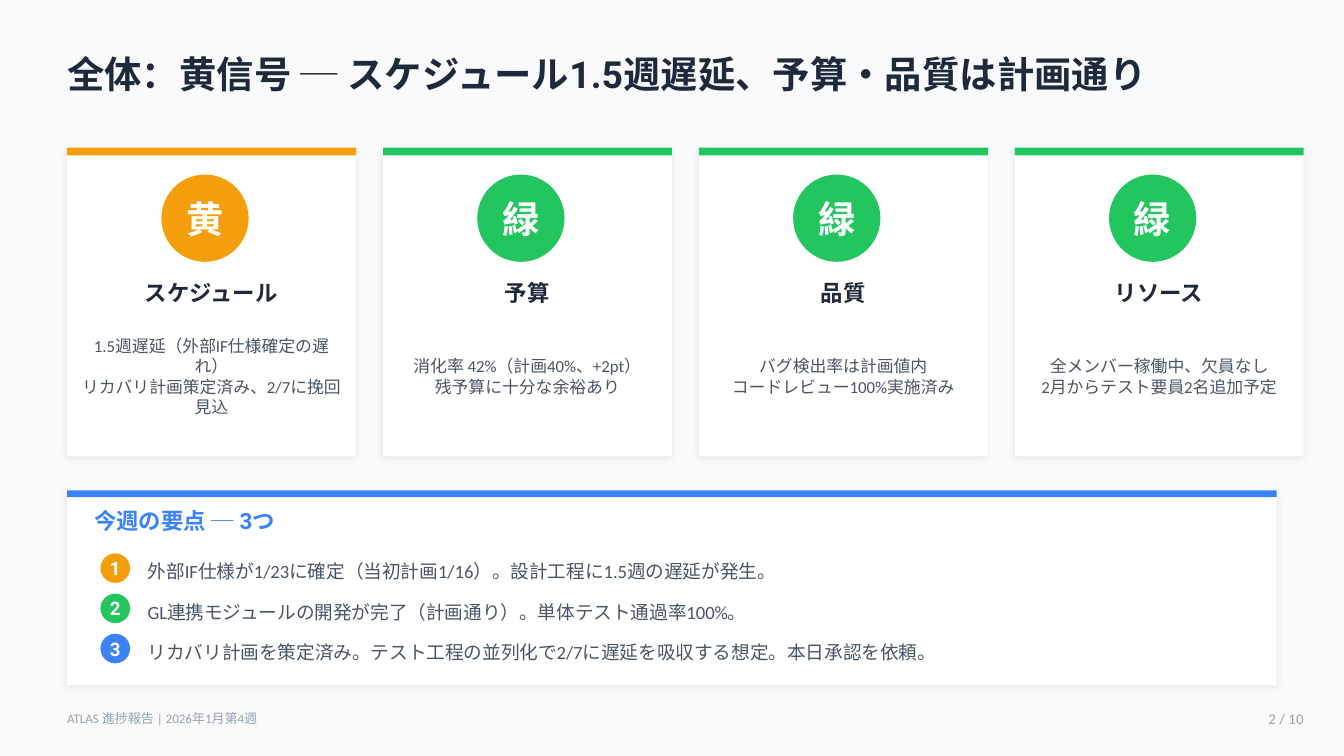
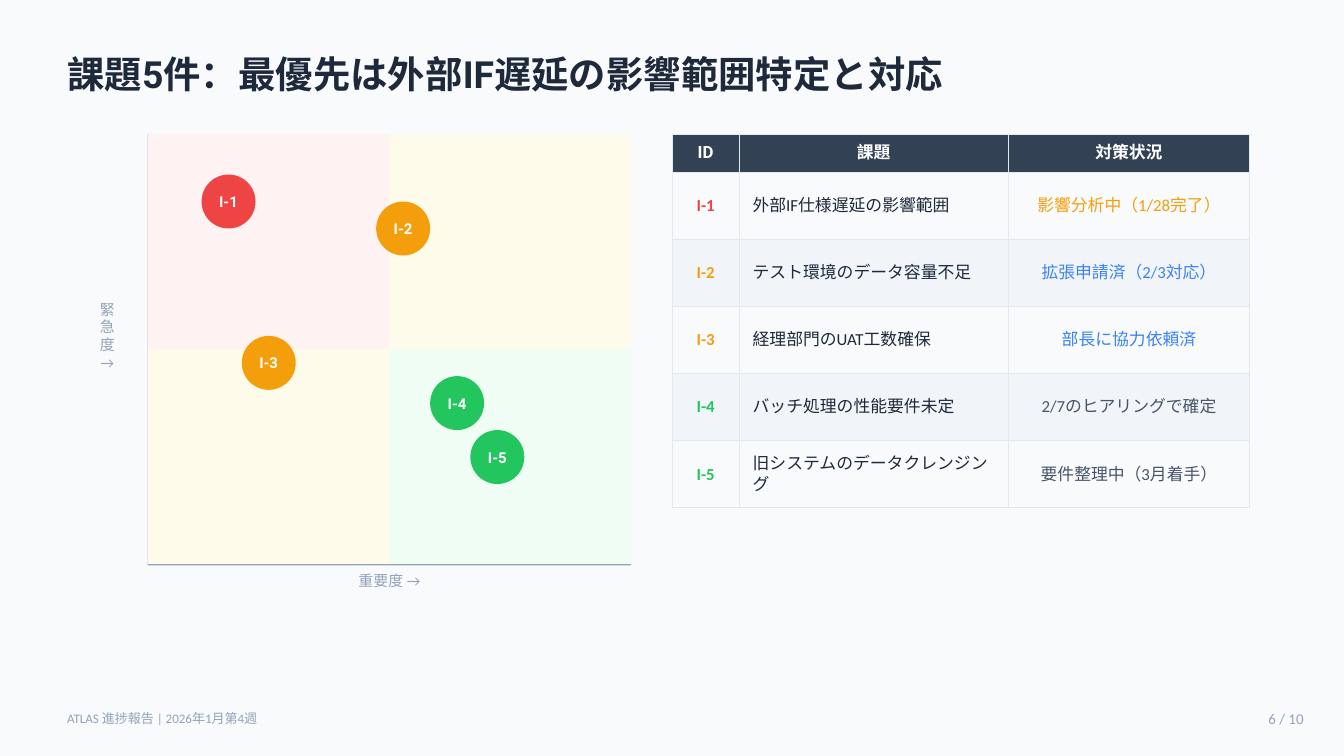
from lxml.etree import SubElement
from pptx import Presentation
from pptx.dml.color import RGBColor
from pptx.enum.shapes import MSO_SHAPE as Preset
from pptx.enum.text import MSO_ANCHOR as Anchor, MSO_AUTO_SIZE as AutoSize, PP_ALIGN as Align
from pptx.oxml.ns import qn
from pptx.util import Cm, Pt

RED, AMBER, GREEN, BLUE = "EF4444", "F59E0B", "22C55E", "3B82F6"
INK, BODY, MUTED, WHITE = "1E293B", "475569", "94A3B8", "FFFFFF"
BACKGROUND, HEADER, BAND, BORDER = "F8FAFC", "334155", "F1F5F9", "E2E8F0"
PALE_RED, PALE_AMBER, PALE_GREEN = "FEF2F2", "FFFBEB", "F0FDF4"
HEADING_FONT, BODY_FONT = "Roboto", "Calibri"
TITLE_AND_BODY, TITLE_ONLY = 1, 5
MARGIN = 1.27
PAGE_COUNT = 10


def rgb(value):
    return RGBColor.from_string(value)


def add_color(parent, value):
    """Append a solid colour element and return it."""
    return SubElement(parent, qn("a:srgbClr"), val=value)


class Deck:
    """Holds the shared style and the slide being built; lengths are centimetres."""

    def __init__(self):
        self.presentation = Presentation()
        self.presentation.slide_width = Cm(25.4)
        self.presentation.slide_height = Cm(14.29)
        fill = self.presentation.slide_master.background.fill
        fill.solid()
        fill.fore_color.rgb = rgb(BACKGROUND)
        self.slide = None

    def start_slide(self, layout, title, page):
        layouts = self.presentation.slide_layouts
        self.slide = self.presentation.slides.add_slide(layouts[layout])
        shape = self.slide.shapes.title
        self.place(shape, MARGIN, 0.76, 22.86, 1.27)
        self.set_text(shape.text_frame, title, 20, INK, HEADING_FONT, bold=True)
        self.add_text("ATLAS 進捗報告 | 2026年1月第4週", MARGIN, 13.26, 9.65, 0.64, 7, MUTED)
        self.add_text(f"{page} / {PAGE_COUNT}", 23.37, 13.26, 1.27, 0.64, 8, MUTED,
                      align=Align.RIGHT)

    def place(self, shape, left, top, width, height):
        """Position a text-bearing shape and give it the standard frame."""
        shape.left, shape.top = Cm(left), Cm(top)
        shape.width, shape.height = Cm(width), Cm(height)
        frame = shape.text_frame
        frame.margin_left = frame.margin_right = 0
        frame.margin_top = frame.margin_bottom = 0
        frame.vertical_anchor = Anchor.MIDDLE
        frame.auto_size = AutoSize.NONE
        frame.word_wrap = True

    def set_text(self, frame, text, size, color, font=BODY_FONT, bold=False, align=Align.LEFT):
        frame.text = text
        for paragraph in frame.paragraphs:
            paragraph.alignment = align
            for run in paragraph.runs:
                run.font.size = Pt(size)
                run.font.bold = bold
                run.font.color.rgb = rgb(color)
                run.font.name = font
                SubElement(run._r.get_or_add_rPr(), qn("a:ea"), typeface=font)

    def add_text(self, text, left, top, width, height, size, color, **style):
        shape = self.slide.shapes.add_textbox(0, 0, 0, 0)
        self.place(shape, left, top, width, height)
        self.set_text(shape.text_frame, text, size, color, **style)

    def add_list(self, items, left, top, width, height, pitch):
        """Fill the body placeholder, one unbulleted line per item, above earlier shapes."""
        shape = self.slide.placeholders[1]
        self.slide.shapes.element.append(shape.element)
        self.place(shape, left, top, width, height)
        self.set_text(shape.text_frame, "\n".join(items), 10, BODY)
        for paragraph in shape.text_frame.paragraphs:
            paragraph.space_before = Pt(0)
            paragraph.line_spacing = Cm(pitch)
            properties = paragraph._p.get_or_add_pPr()
            properties.set("marL", "0")
            properties.set("indent", "0")
            SubElement(properties, qn("a:buNone"))

    def add_block(self, left, top, width, height, color, preset=Preset.RECTANGLE):
        shape = self.slide.shapes.add_shape(preset, Cm(left), Cm(top), Cm(width), Cm(height))
        shape.shadow.inherit = False
        shape.fill.solid()
        shape.fill.fore_color.rgb = rgb(color)
        shape.line.fill.background()
        return shape

    def add_circle(self, text, left, top, diameter, color, size):
        shape = self.add_block(left, top, diameter, diameter, color, Preset.OVAL)
        self.place(shape, left, top, diameter, diameter)
        self.set_text(shape.text_frame, text, size, WHITE, HEADING_FONT, True, Align.CENTER)
        shape.text_frame.word_wrap = False

    def add_card(self, left, top, width, height, color, strip):
        """White card with a soft shadow and a coloured strip along its top."""
        card = self.add_block(left, top, width, height, WHITE)
        effects = card.element.spPr.find(qn("a:effectLst"))
        shadow = SubElement(effects, qn("a:outerShdw"), blurRad=str(Pt(4)), dist=str(Pt(1)),
                            dir=str(135 * 60000), algn="bl", rotWithShape="0")
        SubElement(add_color(shadow, "000000"), qn("a:alpha"), val="8000")
        self.add_block(left, top, width, strip, color)

    def add_table(self, left, top, widths, heights):
        shape = self.slide.shapes.add_table(len(heights), len(widths), Cm(left), Cm(top),
                                            Cm(sum(widths)), Cm(sum(heights)))
        table = shape.table
        table.horz_banding = False
        for column, width in zip(table.columns, widths):
            column.width = Cm(width)
        for row, height in zip(table.rows, heights):
            row.height = Cm(height)
        return table

    def fill_cell(self, cell, text, fill, color, **style):
        self.set_text(cell.text_frame, text, 9, color, **style)
        cell.vertical_anchor = Anchor.MIDDLE
        properties = cell._tc.get_or_add_tcPr()
        for side in ("a:lnL", "a:lnR", "a:lnT", "a:lnB"):
            line = SubElement(properties, qn(side), w=str(Pt(0.5)))
            add_color(SubElement(line, qn("a:solidFill")), BORDER)
        if fill:
            cell.fill.solid()
            cell.fill.fore_color.rgb = rgb(fill)
        else:
            cell.fill.background()


def build_status_slide(deck):
    deck.start_slide(TITLE_AND_BODY,
                     "全体：黄信号 ─ スケジュール1.5週遅延、予算・品質は計画通り", 2)
    statuses = [
        ("黄", AMBER, "スケジュール",
         "1.5週遅延（外部IF仕様確定の遅れ）\nリカバリ計画策定済み、2/7に挽回見込"),
        ("緑", GREEN, "予算", "消化率 42%（計画40%、+2pt）\n残予算に十分な余裕あり"),
        ("緑", GREEN, "品質", "バグ検出率は計画値内\nコードレビュー100%実施済み"),
        ("緑", GREEN, "リソース", "全メンバー稼働中、欠員なし\n2月からテスト要員2名追加予定"),
    ]
    for index, (signal, color, heading, detail) in enumerate(statuses):
        left = MARGIN + index * 5.97
        deck.add_card(left, 2.79, 5.46, 5.84, color, 0.15)
        deck.add_circle(signal, left + 1.78, 3.3, 1.65, color, 20)
        deck.add_text(heading, left + 0.25, 5.21, 4.95, 0.64, 12, INK,
                      font=HEADING_FONT, bold=True, align=Align.CENTER)
        deck.add_text(detail, left + 0.25, 5.97, 4.95, 2.29, 9, BODY, align=Align.CENTER)

    deck.add_card(MARGIN, 9.27, 22.86, 3.68, BLUE, 0.13)
    deck.add_text("今週の要点 ─ 3つ", 1.78, 9.53, 7.62, 0.64, 12, BLUE,
                  font=HEADING_FONT, bold=True)
    pitch = 0.76
    for index, color in enumerate((AMBER, GREEN, BLUE)):
        deck.add_circle(str(index + 1), 1.9, 10.46 + index * pitch, 0.56, color, 10)
    points = [
        "外部IF仕様が1/23に確定（当初計画1/16）。設計工程に1.5週の遅延が発生。",
        "GL連携モジュールの開発が完了（計画通り）。単体テスト通過率100%。",
        "リカバリ計画を策定済み。テスト工程の並列化で2/7に遅延を吸収する想定。本日承認を依頼。",
    ]
    deck.add_list(points, 2.79, 10.25, 20.83, 2.29, pitch)


def build_issue_slide(deck):
    deck.start_slide(TITLE_ONLY, "課題5件：最優先は外部IF遅延の影響範囲特定と対応", 6)
    issues = [
        ("I-1", RED, 3.81, 3.3, "外部IF仕様遅延の影響範囲", "影響分析中（1/28完了）", AMBER),
        ("I-2", AMBER, 7.11, 3.81, "テスト環境のデータ容量不足", "拡張申請済（2/3対応）", BLUE),
        ("I-3", AMBER, 4.57, 6.35, "経理部門のUAT工数確保", "部長に協力依頼済", BLUE),
        ("I-4", GREEN, 8.13, 7.11, "バッチ処理の性能要件未定", "2/7のヒアリングで確定", BODY),
        ("I-5", GREEN, 8.89, 8.13, "旧システムのデータクレンジング", "要件整理中（3月着手）", BODY),
    ]

    left, top, width, height = 2.79, 2.54, 4.57, 4.06
    deck.add_block(left, top, 0.03, 2 * height, MUTED)
    deck.add_block(left, top + 2 * height, 2 * width, 0.03, MUTED)
    deck.add_text("重要度 →", left, 10.72, 2 * width, 0.51, 8, MUTED, align=Align.CENTER)
    deck.add_text("\n".join("緊急度→"), 1.52, 3.81, 1.02, 5.08, 8, MUTED, align=Align.CENTER)
    quadrants = ((PALE_RED, PALE_AMBER), (PALE_AMBER, PALE_GREEN))
    for row, colors in enumerate(quadrants):
        for column, color in enumerate(colors):
            deck.add_block(left + column * width, top + row * height, width, height, color)
    for name, color, x, y, *_ in issues:
        deck.add_circle(name, x, y, 1.02, color, 8)

    table = deck.add_table(12.7, top, (1.27, 5.08, 4.57), [0.71] + [1.27] * len(issues))
    for column, heading in enumerate(("ID", "課題", "対策状況")):
        deck.fill_cell(table.cell(0, column), heading, HEADER, WHITE,
                       font=HEADING_FONT, bold=True, align=Align.CENTER)
    for row, (name, color, _, _, issue, action, action_color) in enumerate(issues, 1):
        fill = BAND if row % 2 == 0 else None
        deck.fill_cell(table.cell(row, 0), name, fill, color, bold=True, align=Align.CENTER)
        deck.fill_cell(table.cell(row, 1), issue, fill, INK)
        deck.fill_cell(table.cell(row, 2), action, fill, action_color, align=Align.CENTER)


def main():
    deck = Deck()
    build_status_slide(deck)
    build_issue_slide(deck)
    deck.presentation.save("out.pptx")


if __name__ == "__main__":
    main()
